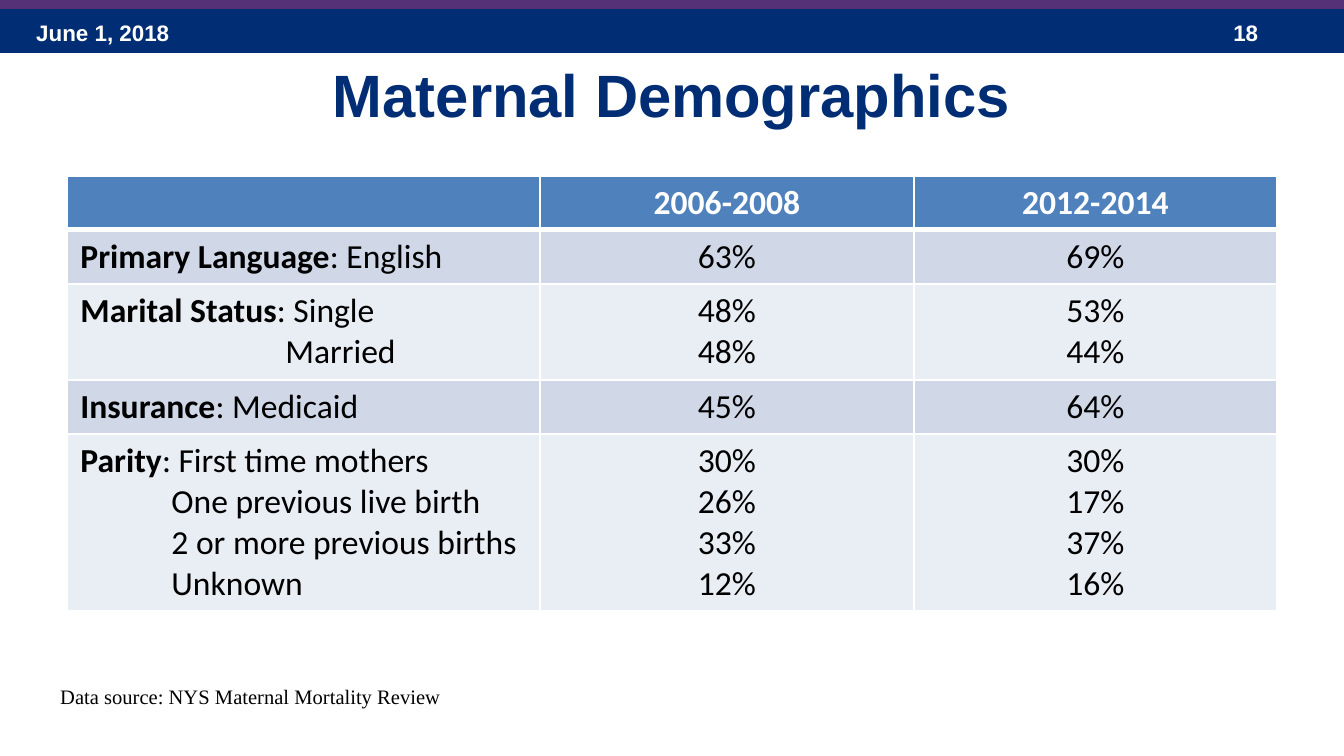
from lxml import etree
from pptx import Presentation, util as u
from pptx.dml.color import RGBColor
from pptx.enum import shapes, text
from pptx.oxml.ns import qn

PX = 914400 / 134.4
NAVY, PURPLE, WHITE, BLACK = "002D73", "553278", "FFFFFF", "000000"
HEADER, BANDS = "4F81BD", ("D0D8E8", "E9EDF4")
LEFT, CENTER = text.PP_ALIGN.LEFT, text.PP_ALIGN.CENTER

# Label, indent of its further lines in px, row height in px, lines of
# (category, 2006-2008, 2012-2014)
ROWS = [
    ("Primary Language", 0, 54, [("English", "63%", "69%")]),
    ("Marital Status", 205, 96, [("Single", "48%", "53%"),
                                 ("Married", "48%", "44%")]),
    ("Insurance", 0, 54, [("Medicaid", "45%", "64%")]),
    ("Parity", 91, 177, [("First time mothers", "30%", "30%"),
                         ("One previous live birth", "26%", "17%"),
                         ("2 or more previous births", "33%", "37%"),
                         ("Unknown", "12%", "16%")]),
]


def px(n):
    return u.Emu(round(n * PX))


def rgb(color):
    return RGBColor.from_string(color)


def add_run(p, words, font="Calibri", size=18, color=BLACK, bold=False,
            align=LEFT):
    p.alignment = align
    r = p.add_run()
    r.text = words
    f = r.font
    f.name, f.size, f.bold = font, u.Pt(size), bold
    f.color.rgb = rgb(color)


def add_border(cell, side, width, color=WHITE):
    """Sides must come in the order L, R, T, B, before the cell's fill."""
    ln = etree.SubElement(cell._tc.get_or_add_tcPr(), qn(f"a:ln{side}"),
                          w=str(u.Pt(width)))
    fill = etree.SubElement(ln, qn("a:solidFill"))
    etree.SubElement(fill, qn("a:srgbClr"), val=color)


class Deck:
    def __init__(self, width, height):
        self.prs = Presentation()
        self.prs.slide_width, self.prs.slide_height = px(width), px(height)
        self.s = self.prs.slides.add_slide(self.prs.slide_layouts[5])

    def bar(self, x, y, w, h, color):
        sp = self.s.shapes.add_shape(shapes.MSO_SHAPE.RECTANGLE,
                                     px(x), px(y), px(w), px(h))
        sp.shadow.inherit = False
        sp.fill.solid()
        sp.fill.fore_color.rgb = rgb(color)
        sp.line.fill.background()

    def label(self, x, y, w, h, words, wrap=True, **style):
        sp = self.s.shapes.add_textbox(px(x), px(y), px(w), px(h))
        sp.text_frame.word_wrap = wrap
        add_run(sp.text_frame.paragraphs[0], words, **style)

    def title(self, x, y, w, h, words, **style):
        sp = self.s.shapes.title
        sp.left, sp.top, sp.width, sp.height = px(x), px(y), px(w), px(h)
        sp.text_frame.vertical_anchor = text.MSO_ANCHOR.MIDDLE
        add_run(sp.text_frame.paragraphs[0], words, **style)

    def cell(self, cell, lines, fill, top=1, bottom=1, indent=0, **style):
        """Each line is a list of (words, bold) runs; later lines indent."""
        for side, width in zip("LRTB", (1, 1, top, bottom)):
            add_border(cell, side, width)
        cell.fill.solid()
        cell.fill.fore_color.rgb = rgb(fill)
        tf = cell.text_frame
        for i, runs in enumerate(lines):
            p = tf.add_paragraph() if i else tf.paragraphs[0]
            if i and indent:
                p._p.get_or_add_pPr().set("marL", str(px(indent)))
            for words, bold in runs:
                add_run(p, words, bold=bold, **style)

    def table(self, x, y, widths, header, header_height, rows):
        heights = [header_height] + [row[2] for row in rows]
        table = self.s.shapes.add_table(
            len(heights), len(widths), px(x), px(y),
            px(sum(widths)), px(sum(heights))).table
        for col, w in zip(table.columns, widths):
            col.width = px(w)
        for row, h in zip(table.rows, heights):
            row.height = px(h)
        for c, words in enumerate(header):
            self.cell(table.cell(0, c), [[(words, True)]] if words else [],
                      HEADER, bottom=3, color=WHITE, align=CENTER)
        for r, (name, indent, _, lines) in enumerate(rows, 1):
            fill, top = BANDS[(r - 1) % 2], 3 if r == 1 else 1
            names, *periods = zip(*lines)
            first = [(name, True), (f": {names[0]}", False)]
            rest = [[(n, False)] for n in names[1:]]
            self.cell(table.cell(r, 0), [first] + rest, fill, top,
                      indent=indent)
            for c, values in enumerate(periods, 1):
                self.cell(table.cell(r, c), [[(v, False)] for v in values],
                          fill, top, align=CENTER)


def main():
    deck = Deck(1344, 756)
    deck.bar(0, 9, 1344, 44, NAVY)
    deck.bar(0, -3, 1344, 12, PURPLE)
    banner = dict(font="Arial", size=12, color=WHITE, bold=True)
    deck.label(23, 13, 313, 40, "June 1, 2018", **banner)
    deck.label(1220, 13, 101, 40, "18", **banner)
    deck.title(67, 31, 1210, 126, "Maternal Demographics", font="Arial",
               size=32, color=NAVY, bold=True, align=CENTER)
    deck.table(67, 176, (473, 374, 363), ("", "2006-2008", "2012-2014"),
               54, ROWS)
    deck.label(47, 677, 409, 39, "Data source: NYS Maternal Mortality Review",
               wrap=False, font="Times New Roman", size=11)
    deck.prs.save("out.pptx")


if __name__ == "__main__":
    main()
